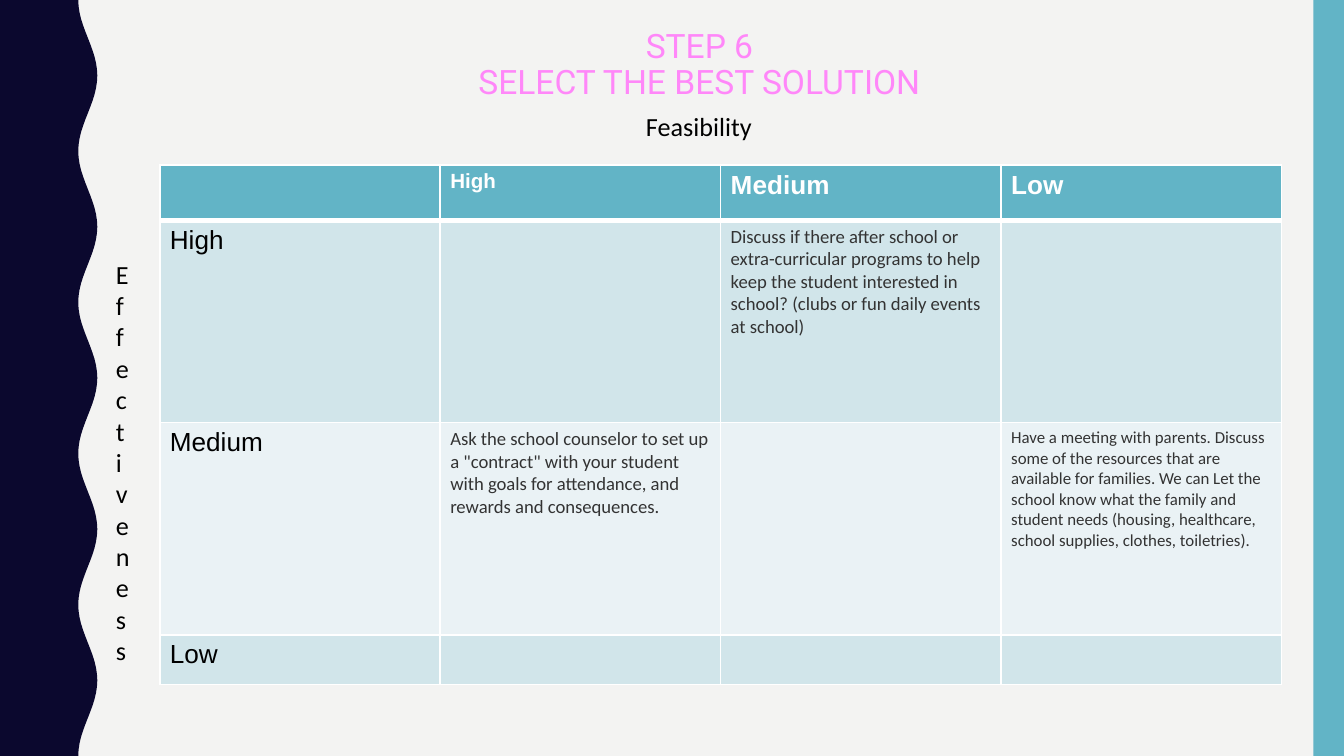
from math import cos, pi

from lxml.etree import SubElement
from pptx import Presentation
from pptx.dml.color import RGBColor
from pptx.enum.shapes import MSO_SHAPE
from pptx.enum.text import MSO_ANCHOR, MSO_AUTO_SIZE, PP_ALIGN
from pptx.oxml.ns import qn
from pptx.util import Cm, Pt

# Content
TITLE = ["STEP 6", "SELECT THE BEST SOLUTION"]
COLUMN_AXIS, ROW_AXIS = "Feasibility", "Effectiveness"
GRID = [
    ["", "High", "Medium", "Low"],
    ["High", "",
     "Discuss if there after school or extra-curricular programs to help keep "
     "the student interested in school? (clubs or fun daily events at school)", ""],
    ["Medium",
     "Ask the school counselor to set up a \"contract\" with your student with "
     "goals for attendance, and rewards and consequences.", "",
     "Have a meeting with parents. Discuss some of the resources that are "
     "available for families. We can Let the school know what the family and "
     "student needs (housing, healthcare, school supplies, clothes, toiletries)."],
    ["Low", "", "", ""],
]

# Look
COLORS = {"background": "F3F3F2", "wave": "0B082E", "accent": "62B4C6",
          "title": "FF87F9", "odd": "D1E5EA", "even": "EAF2F5",
          "white": "FFFFFF", "black": "000000", "note": "333333"}
TITLE_FONT = {"name": "Roboto", "size": Pt(18), "color": "title"}
AXIS_FONT = {"name": "Calibri", "size": Pt(14), "color": "black"}
HEADER_FONT = {"name": "Arial", "size": Pt(14), "bold": True, "color": "white"}
LABEL_FONT = {"name": "Arial", "size": Pt(14), "bold": False, "color": "black"}
NOTE_FONT = {"name": "Calibri", "size": Pt(10), "bold": False, "color": "note"}
SIZE_EXCEPTIONS = {(0, 1): Pt(11), (2, 3): Pt(9)}

# Geometry in centimetres
WIDTH, HEIGHT = 25.4, 14.29
WAVE_MIDDLE, WAVE_DEPTH, WAVES, STEPS = 1.66, 0.18, 5, 24
BAR_WIDTH = 0.58
TABLE_LEFT, TABLE_TOP, COLUMN_WIDTH = 3.02, 3.12, 5.3
ROW_HEIGHTS = [1.04, 3.83, 4.01, 0.94]


def rgb(name):
    return RGBColor.from_string(COLORS[name])


def paint(sp, color):
    sp.fill.solid()
    sp.fill.fore_color.rgb = rgb(color)
    sp.line.fill.background()
    sp.shadow.inherit = False


def add_run(p, text, style):
    r = p.add_run()
    r.text = text
    for key, value in style.items():
        if key == "color":
            r.font.color.rgb = rgb(value)
        else:
            setattr(r.font, key, value)


def set_frame(tf):
    frame = {"margin_left": Cm(0.18), "margin_right": Cm(0.18),
             "margin_top": Cm(0.1), "margin_bottom": Cm(0.1),
             "word_wrap": True, "vertical_anchor": MSO_ANCHOR.TOP,
             "auto_size": MSO_AUTO_SIZE.NONE}
    for key, value in frame.items():
        setattr(tf, key, value)


def add_axis_label(slide, text, box, align):
    tf = slide.shapes.add_textbox(*map(Cm, box)).text_frame
    set_frame(tf)
    tf.auto_size = MSO_AUTO_SIZE.SHAPE_TO_FIT_TEXT
    tf.paragraphs[0].alignment = align
    add_run(tf.paragraphs[0], text, AXIS_FONT)


def set_borders(cell, is_header):
    tc_pr = cell._tc.get_or_add_tcPr()
    fill = tc_pr[0]
    for side in ("lnL", "lnR", "lnT", "lnB"):
        width = Pt(3) if is_header and side == "lnB" else Pt(1)
        ln = SubElement(tc_pr, qn("a:" + side), w=str(width))
        solid = SubElement(ln, qn("a:solidFill"))
        SubElement(solid, qn("a:srgbClr"), val=COLORS["white"])
    tc_pr.append(fill)  # borders come before the fill


def add_decoration(slide):
    # Wavy band on the left
    points = []
    for i in range(WAVES * STEPS + 1):
        x = WAVE_MIDDLE - WAVE_DEPTH * cos(2 * pi * i / STEPS)
        points.append((Cm(x), Cm(HEIGHT * i / (WAVES * STEPS))))
    builder = slide.shapes.build_freeform(0, 0)
    builder.add_line_segments(points + [(0, Cm(HEIGHT))], close=True)
    paint(builder.convert_to_shape(), "wave")

    # Bar on the right
    bar = slide.shapes.add_shape(MSO_SHAPE.RECTANGLE, Cm(WIDTH - BAR_WIDTH), 0,
                                 Cm(BAR_WIDTH), Cm(HEIGHT))
    paint(bar, "accent")


def add_title(slide):
    title = slide.shapes.title
    title.left, title.top, title.width, title.height = map(Cm, (2.62, 0.46, 21.2, 1.7))
    set_frame(title.text_frame)
    p = title.text_frame.paragraphs[0]
    p.alignment, p.line_spacing = PP_ALIGN.CENTER, 0.9
    for i, line in enumerate(TITLE):
        if i:
            p.add_line_break()
        add_run(p, line, TITLE_FONT)


def add_grid(slide):
    rows, cols = len(GRID), len(GRID[0])
    table = slide.shapes.add_table(rows, cols, Cm(TABLE_LEFT), Cm(TABLE_TOP),
                                   Cm(COLUMN_WIDTH * cols), Cm(sum(ROW_HEIGHTS))).table
    for column in table.columns:
        column.width = Cm(COLUMN_WIDTH)
    for i, height in enumerate(ROW_HEIGHTS):
        table.rows[i].height = Cm(height)
        for j, text in enumerate(GRID[i]):
            cell = table.cell(i, j)
            cell.margin_left = cell.margin_right = Cm(0.19)
            cell.margin_top = cell.margin_bottom = Cm(0.1)
            cell.fill.solid()
            fill = "accent" if i == 0 else "odd" if i % 2 else "even"
            cell.fill.fore_color.rgb = rgb(fill)
            set_borders(cell, i == 0)
            p = cell.text_frame.paragraphs[0]
            style = HEADER_FONT if i == 0 else LABEL_FONT if j == 0 else NOTE_FONT
            size = SIZE_EXCEPTIONS.get((i, j), style["size"])
            if text:
                add_run(p, text, {**style, "size": size})
            else:  # keeps empty cells from stretching their row
                SubElement(p._p, qn("a:endParaRPr"), sz=str(int(size.pt * 100)))


def main():
    prs = Presentation()
    prs.slide_width, prs.slide_height = Cm(WIDTH), Cm(HEIGHT)
    slide = prs.slides.add_slide(prs.slide_layouts[5])
    slide.background.fill.solid()
    slide.background.fill.fore_color.rgb = rgb("background")
    add_decoration(slide)
    add_title(slide)
    add_grid(slide)
    add_axis_label(slide, COLUMN_AXIS, (9.63, 1.98, 7.16, 0.79), PP_ALIGN.CENTER)
    # The narrow box stacks the letters one per line
    add_axis_label(slide, ROW_AXIS, (2.01, 4.78, 0.61, 7.7), PP_ALIGN.LEFT)
    prs.save("out.pptx")


if __name__ == "__main__":
    main()
